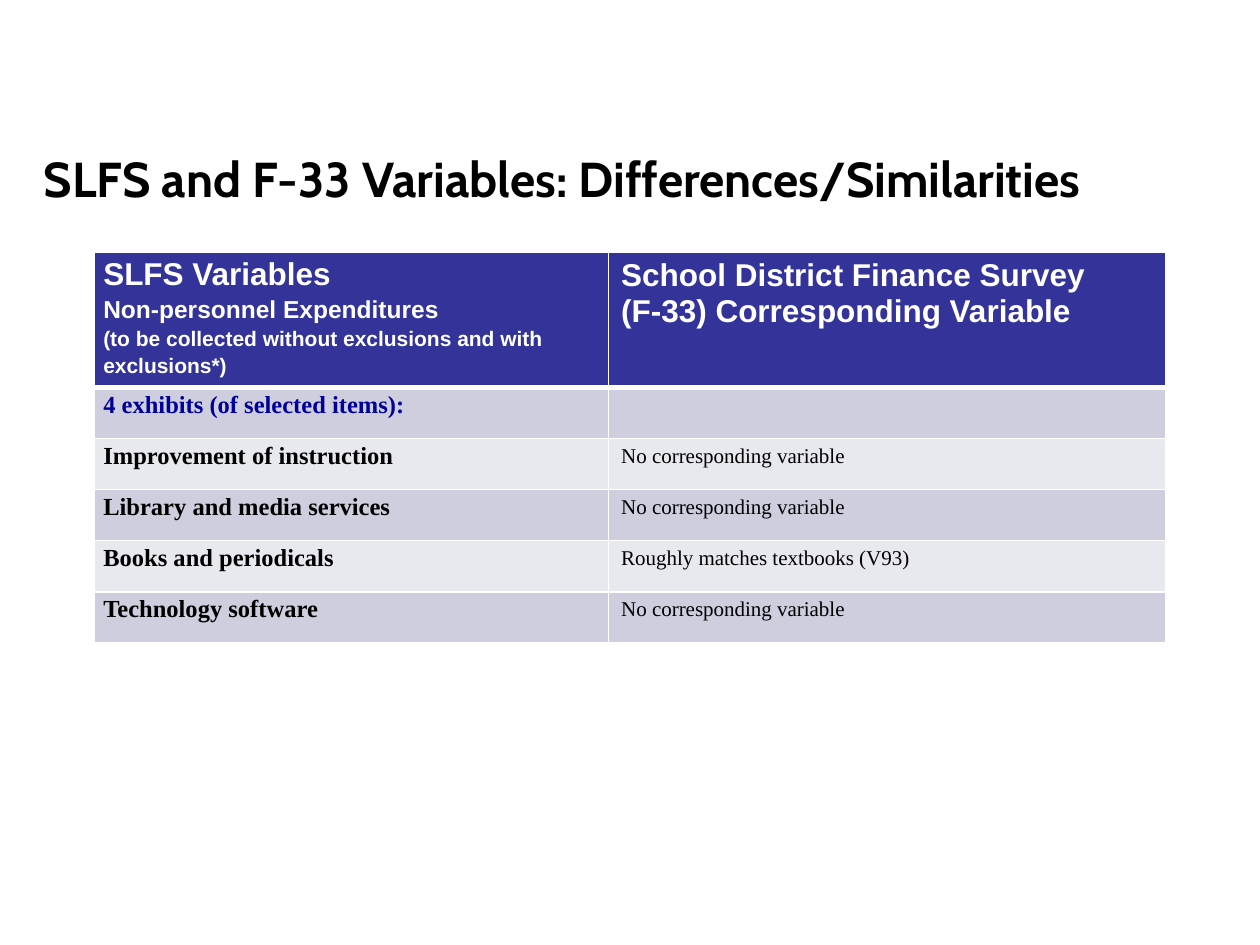
from lxml import etree
from pptx import Presentation
from pptx.dml.color import RGBColor
from pptx.enum.text import MSO_ANCHOR
from pptx.oxml.ns import qn
from pptx.util import Inches, Pt

MIDDLE = MSO_ANCHOR.MIDDLE
BLACK = RGBColor(0, 0, 0)
WHITE = RGBColor(0xFF, 0xFF, 0xFF)
NAVY = RGBColor(0x33, 0x33, 0x99)
BLUE = RGBColor(0, 0, 0x99)
DARK = RGBColor(0xCE, 0xCE, 0xDE)
LIGHT = RGBColor(0xE8, 0xE8, 0xEF)

TIGHT = {
    "margin_left": Inches(0.07),
    "margin_right": Inches(0.07),
    "margin_top": 0,
    "margin_bottom": 0,
}


def form(size, name, color, bold=True):
    return {"size": Pt(size), "name": name, "color": color, "bold": bold}


TITLE = form(28, "Cabin", BLACK)
HEAD = form(18, "Arial", WHITE)
LABEL = form(14, "Times New Roman", BLACK)
VALUE = form(12, "Times New Roman", BLACK, False)

LEFT = [
    ("SLFS Variables", HEAD),
    ("Non-personnel Expenditures", HEAD | {"size": Pt(14)}),
    ("(to be collected without exclusions and with exclusions*)", HEAD | {"size": Pt(12)}),
]
RIGHT = [
    ("School District Finance Survey", HEAD),
    ("(F-33) Corresponding Variable", HEAD),
]
ITEMS = [
    ("4 exhibits (of selected items):", ""),
    ("Improvement of instruction", "No corresponding variable"),
    ("Library and media services", "No corresponding variable"),
    ("Books and periodicals", "Roughly matches textbooks (V93)"),
    ("Technology software", "No corresponding variable"),
]


class Deck:
    def __init__(self, slide):
        self.slide = slide

    def text(self, frame, lines, space=None):
        for i, (words, style) in enumerate(lines):
            para = frame.add_paragraph() if i else frame.paragraphs[0]
            para.text = words
            para.line_spacing = space
            for key, value in style.items():
                if key == "color":
                    para.font.color.rgb = value
                else:
                    setattr(para.font, key, value)

    def title(self, words, *place):
        frame = self.slide.shapes.add_textbox(*map(Inches, place)).text_frame
        frame.word_wrap = True
        frame.vertical_anchor = MIDDLE
        self.text(frame, [(words, TITLE)])

    def edge(self, cell, side, width):
        props = cell._tc.get_or_add_tcPr()
        line = etree.SubElement(props, qn(f"a:ln{side}"), w=str(Pt(width)))
        fill = etree.SubElement(line, qn("a:solidFill"))
        etree.SubElement(fill, qn("a:srgbClr"), val=str(WHITE))

    def cell(self, cell, lines, fill, first, head):
        for side in "LRTB":
            thick = head and side == "B"
            self.edge(cell, side, 3 if thick else 1)
        cell.fill.solid()
        cell.fill.fore_color.rgb = fill
        if first:
            for key, value in TIGHT.items():
                setattr(cell, key, value)
        self.text(cell.text_frame, lines, 1.15 if first else None)

    def table(self, rows, widths, top, high, *place):
        frame = self.slide.shapes.add_table(len(rows), len(widths), *map(Inches, place))
        table = frame.table
        for col, width in zip(table.columns, widths):
            col.width = Inches(width)
        for r, row in enumerate(rows):
            table.rows[r].height = Inches(high if r else top)
            fill = (DARK if r % 2 else LIGHT) if r else NAVY
            for c, lines in enumerate(row):
                self.cell(table.cell(r, c), lines, fill, c == 0, r == 0)


def main():
    show = Presentation()
    show.slide_width, show.slide_height = Inches(10), Inches(7.5)
    deck = Deck(show.slides.add_slide(show.slide_layouts[6]))
    deck.title("SLFS and F-33 Variables: Differences/Similarities", 0.25, 1.08, 9.42, 0.67)
    rows = [(LEFT, RIGHT)]
    for i, (label, value) in enumerate(ITEMS):
        style = LABEL if i else LABEL | {"color": BLUE}
        rows.append(([(label, style)], [(value, VALUE)]))
    top, full = 0.99, 3.02
    high = (full - top) / len(ITEMS)
    deck.table(rows, (4.08, 4.42), top, high, 0.75, 2, 8.5, full)
    show.save("out.pptx")


if __name__ == "__main__":
    main()
